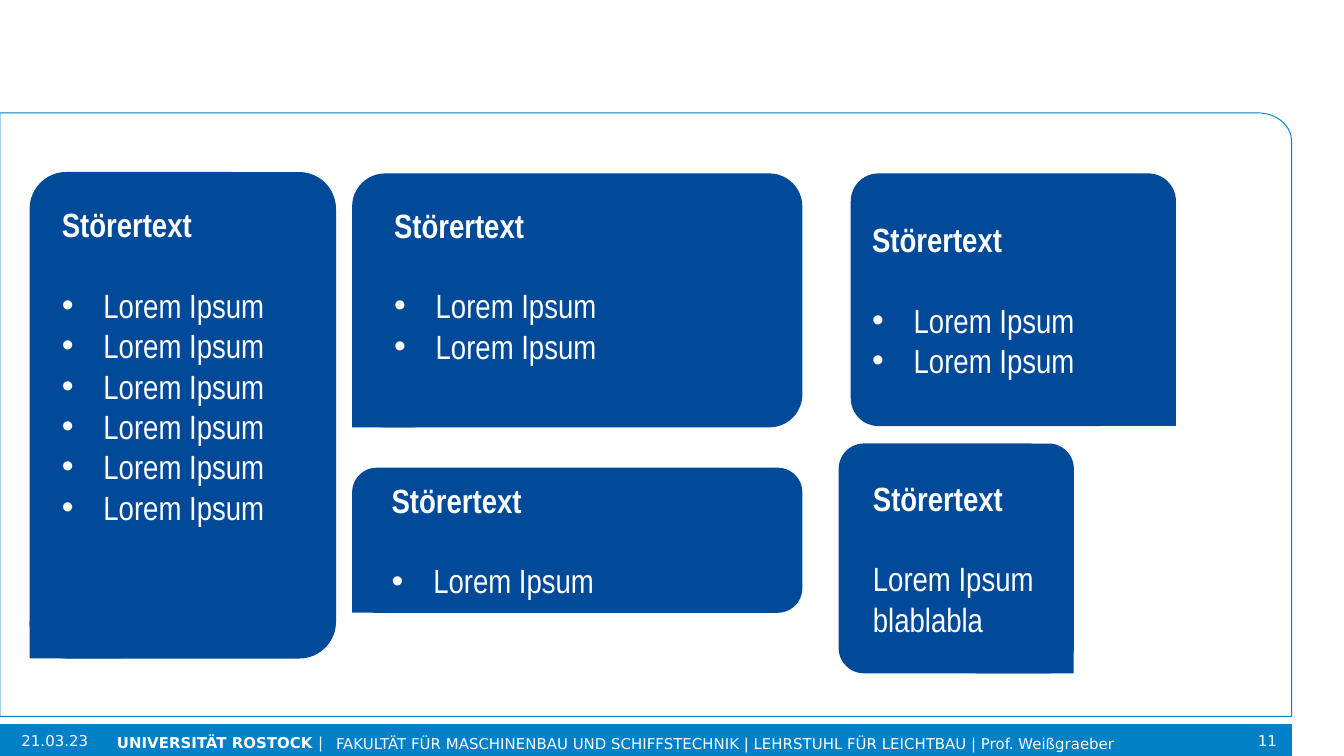
import math

import pptx
import pptx.dml.color
import pptx.enum.shapes
import pptx.enum.text
import pptx.oxml
import pptx.oxml.ns
import pptx.util

Inches = pptx.util.Inches
Pt = pptx.util.Pt
SHAPE = pptx.enum.shapes.MSO_SHAPE
ANCHOR = pptx.enum.text.MSO_ANCHOR
ALIGN = pptx.enum.text.PP_ALIGN


def color(hex_value):
    return pptx.dml.color.RGBColor.from_string(hex_value)


class SlideBuilder:
    blue = "0081C7"
    navy = "004A99"
    white = "FFFFFF"
    footer_font = "DejaVu Sans"
    callout_font = "Arial Narrow"

    def __init__(self, slide):
        self.slide = slide

    def paint(self, shape, fill=None, line=None):
        shape.shadow.inherit = False
        if fill:
            shape.fill.solid()
            shape.fill.fore_color.rgb = color(fill)
        else:
            shape.fill.background()
        if line:
            shape.line.color.rgb = color(line)
            shape.line.width = Pt(0.5)
        else:
            shape.line.fill.background()

    def insets(self, frame, left, top, right, bottom):
        frame.margin_left, frame.margin_top = Inches(left), Inches(top)
        frame.margin_right, frame.margin_bottom = Inches(right), Inches(bottom)

    def format_font(self, font, name, size, bold=False):
        font.name = name
        font.size = Pt(size)
        font.bold = bold
        font.color.rgb = color(self.white)

    def footer_bar(self, left, top, width, height):
        bar = self.slide.shapes.add_shape(
            SHAPE.RECTANGLE, Inches(left), Inches(top), Inches(width), Inches(height))
        self.paint(bar, self.blue, self.blue)

    def content_frame(self, top, right, bottom, radius_x, radius_y, steps=16):
        angles = [math.pi / 2 * step / steps for step in range(steps + 1)]
        corner = [(right - radius_x * (1 - math.sin(angle)),
                   top + radius_y * (1 - math.cos(angle))) for angle in angles]
        outline = corner + [(right, bottom), (0, bottom)]
        builder = self.slide.shapes.build_freeform(0, Inches(top))
        builder.add_line_segments([(Inches(x), Inches(y)) for x, y in outline])
        self.paint(builder.convert_to_shape(), line=self.blue)

    def footer_text(self, left, top, width, runs, margins=(0, 0.05, 0.1, 0.05),
                    anchor=ANCHOR.MIDDLE, align=ALIGN.LEFT):
        box = self.slide.shapes.add_textbox(
            Inches(left), Inches(top), Inches(width), Inches(0.24))
        frame = box.text_frame
        frame.word_wrap = True
        frame.vertical_anchor = anchor
        self.insets(frame, *margins)
        paragraph = frame.paragraphs[0]
        paragraph.alignment = align
        for text, bold in runs:
            run = paragraph.add_run()
            run.text = text
            self.format_font(run.font, self.footer_font, 8, bold)

    def bullet(self, paragraph):
        properties = paragraph._p.get_or_add_pPr()
        properties.set("marL", str(Inches(0.31)))
        properties.set("indent", str(-Inches(0.31)))
        namespace = pptx.oxml.ns.nsdecls("a")
        properties.append(pptx.oxml.parse_xml(f'<a:buFont {namespace} typeface="Arial"/>'))
        properties.append(pptx.oxml.parse_xml(f'<a:buChar {namespace} char="•"/>'))

    def callout(self, place, rounding, corner_size, corner_side, lines,
                margins, anchor=ANCHOR.MIDDLE, bulleted=True):
        left, top, width, height = place
        corner_width, corner_height = corner_size
        corner_left = left if corner_side == "left" else left + width - corner_width
        group = self.slide.shapes.add_group_shape()
        panel = group.shapes.add_shape(
            SHAPE.ROUNDED_RECTANGLE, Inches(left), Inches(top), Inches(width), Inches(height))
        panel.adjustments[0] = rounding
        corner = group.shapes.add_shape(
            SHAPE.RECTANGLE, Inches(corner_left), Inches(top + height - corner_height),
            Inches(corner_width), Inches(corner_height))
        self.paint(panel, self.navy)
        self.paint(corner, self.navy)
        frame = panel.text_frame
        frame.word_wrap = True
        frame.vertical_anchor = anchor
        self.insets(frame, *margins)
        frame.text = "\n".join(["Störertext"] + lines)
        for index, paragraph in enumerate(frame.paragraphs):
            paragraph.alignment = ALIGN.LEFT
            if index == 1:
                paragraph.space_before = Pt(21.6)
            if index and bulleted:
                self.bullet(paragraph)
            for run in paragraph.runs:
                self.format_font(run.font, self.callout_font, 18, index == 0)


def main():
    presentation = pptx.Presentation()
    presentation.slide_width = Inches(10)
    presentation.slide_height = Inches(10) * 9 // 16
    page = SlideBuilder(presentation.slides.add_slide(presentation.slide_layouts[6]))

    page.footer_bar(0, 5.39, 9.61, 0.24)
    page.content_frame(0.84, 9.61, 5.33, 0.25, 0.21)
    page.footer_text(0.87, 5.41, 1.69, [("UNIVERSITÄT ROSTOCK ", True), ("|", False)],
                     anchor=ANCHOR.TOP)
    page.footer_text(9.11, 5.39, 0.49, [("11", False)], (0.1, 0.05, 0.1, 0.05),
                     align=ALIGN.RIGHT)
    page.footer_text(0.16, 5.39, 0.55, [("21.03.23", False)], (0, 0.05, 0, 0.05))
    page.footer_text(2.5, 5.41, 6.28, [(
        "FAKULTÄT FÜR MASCHINENBAU UND SCHIFFSTECHNIK | "
        "LEHRSTUHL FÜR LEICHTBAU | Prof. Weißgraeber", False)])

    item = "Lorem Ipsum"
    page.callout((0.22, 1.28, 2.28, 3.62), 0.12, (0.68, 0.28), "left", [item] * 6,
                 (0.16, 0.16, 0.1, 0.05), ANCHOR.TOP)
    page.callout((2.62, 1.29, 3.35, 1.89), 0.13, (0.47, 0.24), "left", [item] * 2,
                 (0.24, 0.16, 0.1, 0.05), ANCHOR.TOP)
    page.callout((2.62, 3.48, 3.35, 1.08), 0.17, (0.24, 0.2), "left", [item],
                 (0.24, 0.05, 0.1, 0.05))
    page.callout((6.24, 3.3, 1.75, 1.71), 0.11, (0.73, 0.19), "right",
                 ["Lorem Ipsum blablabla"], (0.2, 0.05, 0.1, 0.05), bulleted=False)
    page.callout((6.33, 1.29, 2.42, 1.88), 0.11, (0.89, 0.22), "right", [item] * 2,
                 (0.1, 0.05, 0.1, 0.05))

    presentation.save("out.pptx")


if __name__ == "__main__":
    main()
